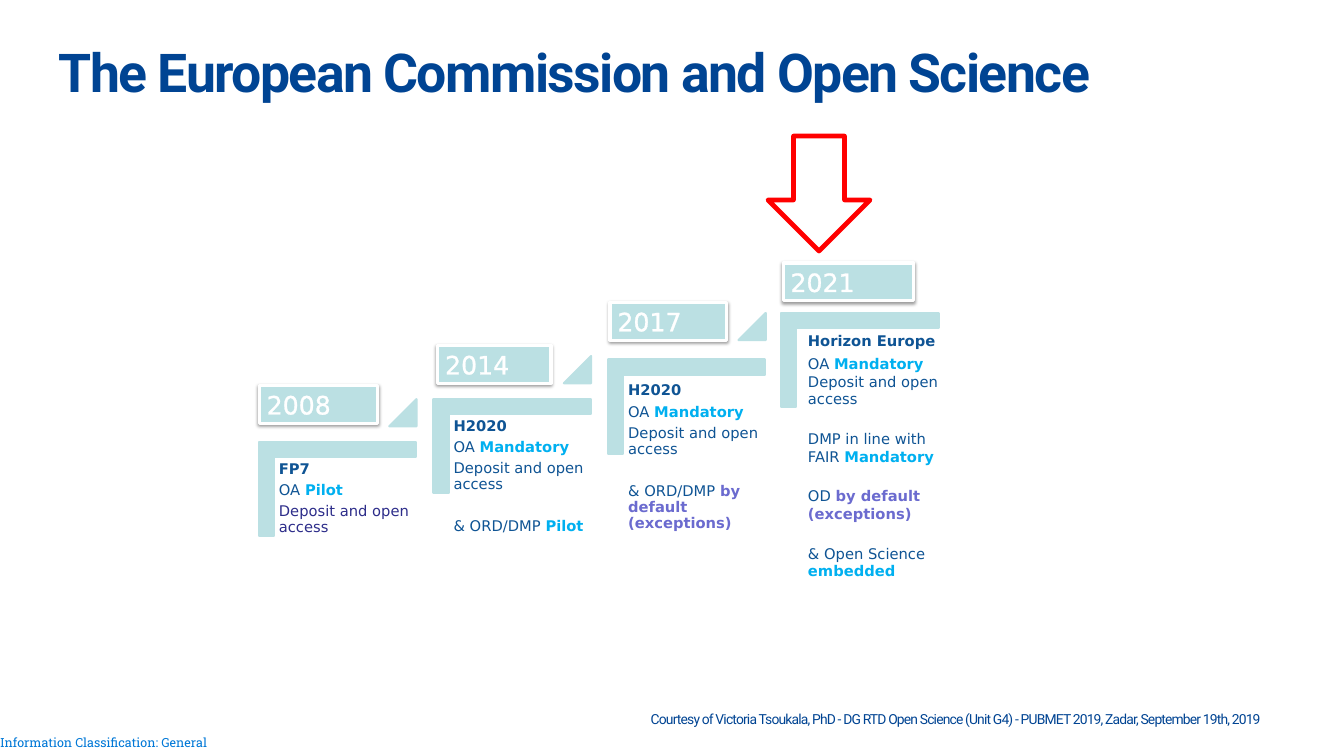
import pptx
import pptx.dml.color
import pptx.enum.shapes
import pptx.enum.text
import pptx.oxml
import pptx.util
from pptx.util import Inches

SHAPE = pptx.enum.shapes.MSO_SHAPE
ANCHOR = pptx.enum.text.MSO_ANCHOR
NAMESPACE = 'xmlns:a="http://schemas.openxmlformats.org/drawingml/2006/main"'
PALE, WHITE, NAVY, TITLE_BLUE = "BBE0E3", "FFFFFF", "0F5494", "004493"
SKY, VIOLET, INDIGO = "00B0F0", "6B6BCF", "2D2D8A"


def color(value):
    return pptx.dml.color.RGBColor.from_string(value)


def write(shape, paragraphs, font, margins=(0.1, 0.05), anchor=ANCHOR.TOP, spacing=None):
    """Each paragraph is (space before, space after, [(text, colour, bold), ...])."""
    frame = shape.text_frame
    frame_format = {
        "word_wrap": True, "vertical_anchor": anchor,
        "margin_left": Inches(margins[0]), "margin_right": Inches(margins[0]),
        "margin_top": Inches(margins[1]), "margin_bottom": Inches(margins[1]),
    }
    for name, value in frame_format.items():
        setattr(frame, name, value)
    for index, (before, after, runs) in enumerate(paragraphs):
        paragraph = frame.add_paragraph() if index else frame.paragraphs[0]
        paragraph_format = {
            "alignment": pptx.enum.text.PP_ALIGN.LEFT, "line_spacing": spacing,
            "space_before": pptx.util.Pt(before), "space_after": pptx.util.Pt(after),
        }
        for name, value in paragraph_format.items():
            setattr(paragraph, name, value)
        for text, run_color, bold in runs:
            run = paragraph.add_run()
            run.text = text
            run_format = {"name": font[0], "size": pptx.util.Pt(font[1]), "bold": bold}
            for name, value in run_format.items():
                setattr(run.font, name, value)
            run.font.color.rgb = color(run_color)
            if len(font) > 2:
                run.font._element.set("spc", str(font[2]))


presentation = pptx.Presentation()
presentation.slide_width = Inches(17.78)
presentation.slide_height = Inches(10)
slide = presentation.slides.add_slide(presentation.slide_layouts[6])
shapes = slide.shapes

# Classification, title and credit
labels = [
    ((0, 9.72, 3.11, 0.2), "Information Classification: General", "0078D7", False,
     ("Roboto Slab", 12), (0, 0), ANCHOR.MIDDLE, None, 0),
    ((0.78, 0.37, 14.8, 1.25), "The European Commission and Open Science", TITLE_BLUE, True,
     ("Roboto", 51, -150), (0, 0), ANCHOR.MIDDLE, 0.9, 24),
    ((8.51, 9.35, 9.07, 0.41),
     "Courtesy of Victoria Tsoukala, PhD - DG RTD Open Science (Unit G4) - PUBMET 2019, "
     "Zadar, September 19th, 2019", TITLE_BLUE, False,
     ("Roboto", 13.2, -80), (0.1, 0.05), ANCHOR.TOP, None, 0),
]
for place, text, text_color, bold, font, margins, anchor, spacing, after in labels:
    box = shapes.add_textbox(*map(Inches, place))
    write(box, [(0, after, [(text, text_color, bold)])], font, margins, anchor, spacing)

# Steps: year, year box, corner position, text position, paragraphs
mandatory = [("OA ", NAVY, False), ("Mandatory", SKY, True)]
deposit = [("Deposit and open access", NAVY, False)]
steps = [
    ("2008", (3.43, 5.1, 1.57), (3.84, 5.43), (3.63, 6.05, 1.88, 1.65), [
        (0, 5, [("FP7", NAVY, True)]),
        (0, 5, [("OA ", NAVY, False), ("Pilot", SKY, True)]),
        (0, 5, [("Deposit and open access", INDIGO, False)]),
    ]),
    ("2014", (5.79, 4.57, 1.5), (6.15, 4.86), (5.94, 5.48, 1.88, 1.65), [
        (0, 5, [("H2020", NAVY, True)]),
        (0, 5, mandatory),
        (0, 5, deposit),
        (20, 5, [("& ORD/DMP ", NAVY, False), ("Pilot", SKY, True)]),
    ]),
    ("2017", (8.07, 4, 1.54), (8.46, 4.34), (8.25, 5.01, 1.87, 1.65), [
        (0, 5, [("H2020", NAVY, True)]),
        (0, 5, mandatory),
        (0, 5, deposit),
        (20, 0, [("& ORD/DMP ", NAVY, False), ("by default", VIOLET, True)]),
        (0, 0, [("(exceptions)", VIOLET, True)]),
    ]),
    ("2021", (10.36, 3.48, 1.73), (10.75, 3.72), (10.59, 4.34, 1.97, 3.43), [
        (0, 0, [("Horizon Europe", NAVY, True)]),
        (5, 0, mandatory),
        (0, 0, deposit),
        (21, 0, [("DMP in line with FAIR ", NAVY, False), ("Mandatory", SKY, True)]),
        (21, 0, [("OD ", NAVY, False), ("by default (exceptions)", VIOLET, True)]),
        (21, 0, [("& Open Science ", NAVY, False), ("embedded", SKY, True)]),
    ]),
]
triangle_tops = [5.28, 4.71, 4.14]

for index, (year, year_place, corner_place, text_place, paragraphs) in enumerate(steps):
    last = index == len(steps) - 1

    # Stair corner, and a triangle leading to the next step
    left, top = corner_place
    parts = [(SHAPE.CORNER, (left, top, 1.25, 2.08), 90, [0.16, 0.16])]
    if not last:
        parts.append((SHAPE.ISOSCELES_TRIANGLE,
                      (left + 1.31, triangle_tops[index], 0.36, 0.36), 0, [1]))
    for kind, place, rotation, adjustments in parts:
        shape = shapes.add_shape(kind, *map(Inches, place))
        shape.rotation = rotation
        for number, value in enumerate(adjustments):
            shape.adjustments[number] = value
        shape.shadow.inherit = False
        shape.fill.solid()
        shape.fill.fore_color.rgb = color(PALE)
        shape.line.color.rgb = color(PALE)
        shape.line.width = pptx.util.Pt(2)

    # Description
    box = shapes.add_textbox(*map(Inches, text_place))
    write(box, paragraphs, ("DejaVu Sans", 14),
          margins=(0.1, 0.05) if last else (0.06, 0.06), spacing=None if last else 0.9)

    # Year box with a soft shadow and outlined digits
    year_box = shapes.add_shape(SHAPE.RECTANGLE, *map(Inches, (*year_place, 0.5)))
    year_box.fill.solid()
    year_box.fill.fore_color.rgb = color(PALE)
    year_box.line.color.rgb = color(WHITE)
    year_box.line.width = pptx.util.Pt(3)
    year_box.shadow.inherit = False
    effects = year_box._element.spPr.find(pptx.oxml.ns.qn("a:effectLst"))
    effects.append(pptx.oxml.parse_xml(
        f'<a:outerShdw {NAMESPACE} blurRad="40000" dist="20000" dir="5400000" rotWithShape="0">'
        '<a:srgbClr val="000000"><a:alpha val="38000"/></a:srgbClr></a:outerShdw>'))
    write(year_box, [(0, 0, [(year, WHITE, False)])], ("DejaVu Sans", 24))
    digits = year_box.text_frame.paragraphs[0].runs[0]
    digits.font._element.insert(0, pptx.oxml.parse_xml(
        f'<a:ln {NAMESPACE} w="18415"><a:solidFill><a:srgbClr val="{WHITE}"/>'
        '</a:solidFill></a:ln>'))

# Red arrow pointing at the current step
arrow = shapes.add_shape(SHAPE.DOWN_ARROW, *map(Inches, (10.16, 1.8, 1.35, 1.52)))
arrow.shadow.inherit = False
arrow.fill.background()
arrow.line.color.rgb = color("FF0000")
arrow.line.width = pptx.util.Pt(4.5)

presentation.save("out.pptx")
